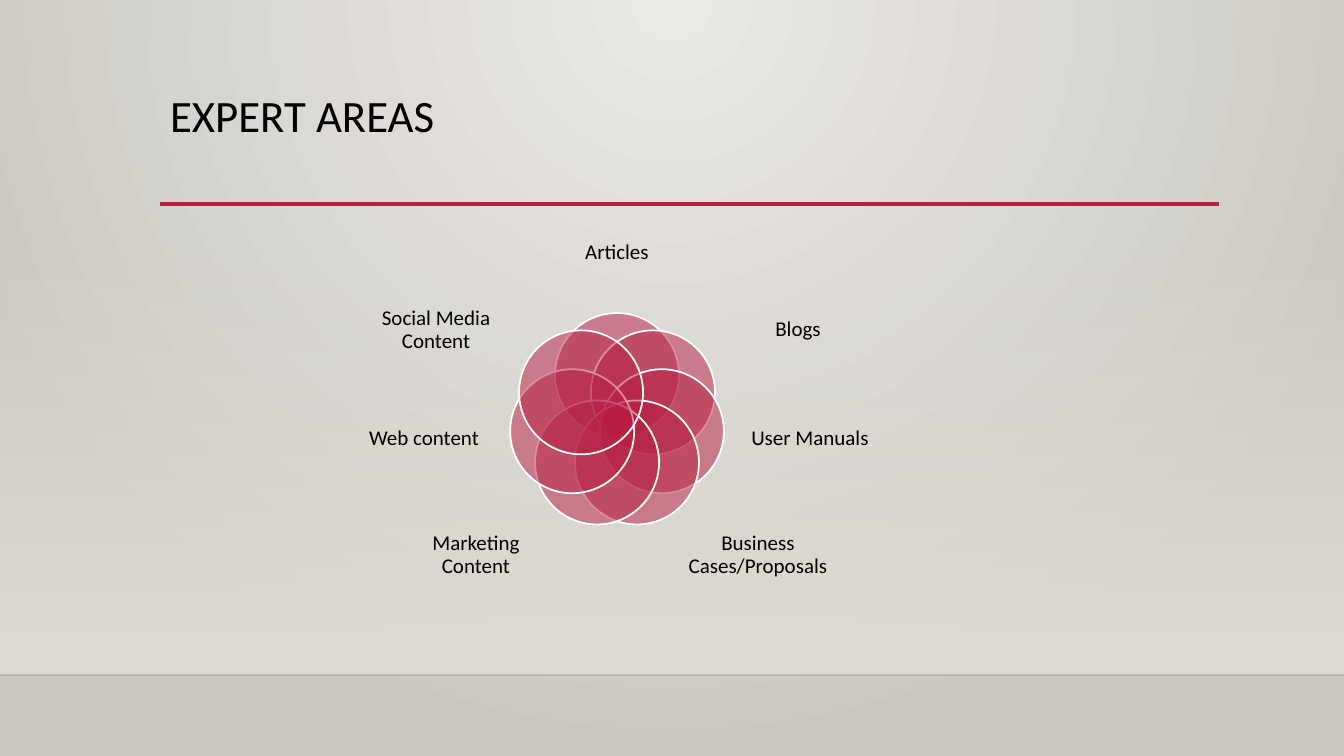
import math

import pptx
import pptx.dml.color
import pptx.enum.shapes
import pptx.enum.text
import pptx.oxml
import pptx.oxml.ns
import pptx.util

# Content: label, horizontal offset from the flower centre, middle y, width, height (px)
TITLE = "EXPERT AREAS"
AREAS = [
    ("Articles", 0, 253, 142, 76),
    ("Blogs", 181, 330, 134, 84),
    ("User Manuals", 193, 439, 132, 90),
    ("Business Cases/Proposals", 141, 555, 142, 82),
    ("Marketing Content", -141, 555, 142, 82),
    ("Web content", -193, 439, 132, 90),
    ("Social Media Content", -181, 330, 134, 84),
]
COLORS = {
    "accent": "B71E42",
    "text": "000000",
    "outline": "FFFFFF",
    "glow": "ECEAE7",
    "edge": "CAC7C1",
    "wall": "DFDBD5",
    "floor": "000001",
}
FONT = "Calibri"
WIDTH, HEIGHT = 1344, 756
FLOOR_Y = 675
CENTER_X, CENTER_Y = 617, 421
RING, RADIUS = 46, 62


def px(value):
    return round(value * 914400 / 100.8)


def rgb(name):
    return pptx.dml.color.RGBColor.from_string(COLORS[name])


def set_alpha(element, percent):
    color = element.find(".//" + pptx.oxml.ns.qn("a:srgbClr"))
    alpha = color.makeelement(pptx.oxml.ns.qn("a:alpha"), {"val": str(percent * 1000)})
    color.append(alpha)


def set_gradient(fill, owner, start, end, start_alpha, direction):
    fill.gradient()
    old = owner.find(".//" + pptx.oxml.ns.qn("a:gradFill"))
    new = pptx.oxml.parse_xml(
        f'<a:gradFill {pptx.oxml.ns.nsdecls("a")} rotWithShape="1"><a:gsLst>'
        f'<a:gs pos="0"><a:srgbClr val="{COLORS[start]}">'
        f'<a:alpha val="{start_alpha * 1000}"/></a:srgbClr></a:gs>'
        f'<a:gs pos="100000"><a:srgbClr val="{COLORS[end]}"/></a:gs>'
        f"</a:gsLst>{direction}</a:gradFill>"
    )
    old.getparent().replace(old, new)


def add_line(page, left, right, y, color, width):
    line = page.shapes.add_connector(
        pptx.enum.shapes.MSO_CONNECTOR.STRAIGHT, px(left), px(y), px(right), px(y))
    line.line.color.rgb = rgb(color)
    line.line.width = pptx.util.Pt(width)
    properties = line.element.spPr
    properties.append(properties.makeelement(pptx.oxml.ns.qn("a:effectLst"), {}))
    return line


def write(box, text, size, align, anchor):
    frame = box.text_frame
    frame.word_wrap = True
    frame.auto_size = pptx.enum.text.MSO_AUTO_SIZE.NONE
    frame.vertical_anchor = anchor
    para = frame.paragraphs[0]
    para.alignment = align
    para.line_spacing = 0.9
    para.space_before = pptx.util.Pt(0)
    span = para.add_run()
    span.text = text
    span.font.name = FONT
    span.font.size = pptx.util.Pt(size)
    span.font.color.rgb = rgb("text")
    return frame


def add_petal(group, x, y):
    petal = group.shapes.add_shape(
        pptx.enum.shapes.MSO_SHAPE.OVAL,
        px(x - RADIUS), px(y - RADIUS), px(2 * RADIUS), px(2 * RADIUS))
    petal.shadow.inherit = False
    petal.fill.solid()
    petal.fill.fore_color.rgb = rgb("accent")
    set_alpha(petal.element.spPr, 50)
    petal.line.color.rgb = rgb("outline")
    petal.line.width = pptx.util.Pt(1.25)


def add_label(group, text, x, y, width, height):
    box = group.shapes.add_textbox(
        px(x - width / 2), px(y - height / 2), px(width), px(height))
    frame = write(box, text, 15, pptx.enum.text.PP_ALIGN.CENTER,
                  pptx.enum.text.MSO_ANCHOR.MIDDLE)
    frame.margin_left = frame.margin_right = 0
    frame.margin_top = frame.margin_bottom = 0


def main():
    deck = pptx.Presentation()
    deck.slide_width, deck.slide_height = px(WIDTH), px(HEIGHT)
    page = deck.slides.add_slide(deck.slide_layouts[5])

    # Backdrop: radial glow, wall fading in downwards, floor edge
    set_gradient(
        page.background.fill, page.element, "glow", "edge", 100,
        '<a:path path="circle">'
        '<a:fillToRect l="43000" t="0" r="43000" b="100000"/></a:path>')
    wall = page.shapes.add_shape(
        pptx.enum.shapes.MSO_SHAPE.RECTANGLE, 0, px(223), px(WIDTH), px(FLOOR_Y - 223))
    wall.shadow.inherit = False
    wall.line.fill.background()
    set_gradient(wall.fill, wall.element.spPr, "wall", "wall", 0,
                 '<a:lin ang="5400000" scaled="0"/>')
    floor = add_line(page, 0, WIDTH, FLOOR_Y, "floor", 1)
    set_alpha(floor.element.spPr, 20)

    # Title and rule
    title = page.shapes.title
    title.left, title.top, title.width, title.height = px(160), px(89), px(1058), px(116)
    write(title, TITLE, 32, pptx.enum.text.PP_ALIGN.LEFT, pptx.enum.text.MSO_ANCHOR.TOP)
    add_line(page, 160, 1219, 204, "accent", 2.5)

    # Flower of overlapping circles, clockwise from the top
    flower = page.shapes.add_group_shape()
    for index, (text, offset, middle, width, height) in enumerate(AREAS):
        angle = 2 * math.pi * index / len(AREAS)
        add_petal(flower, CENTER_X + RING * math.sin(angle),
                  CENTER_Y - RING * math.cos(angle))
        add_label(flower, text, CENTER_X + offset, middle, width, height)

    deck.save("out.pptx")


if __name__ == "__main__":
    main()
